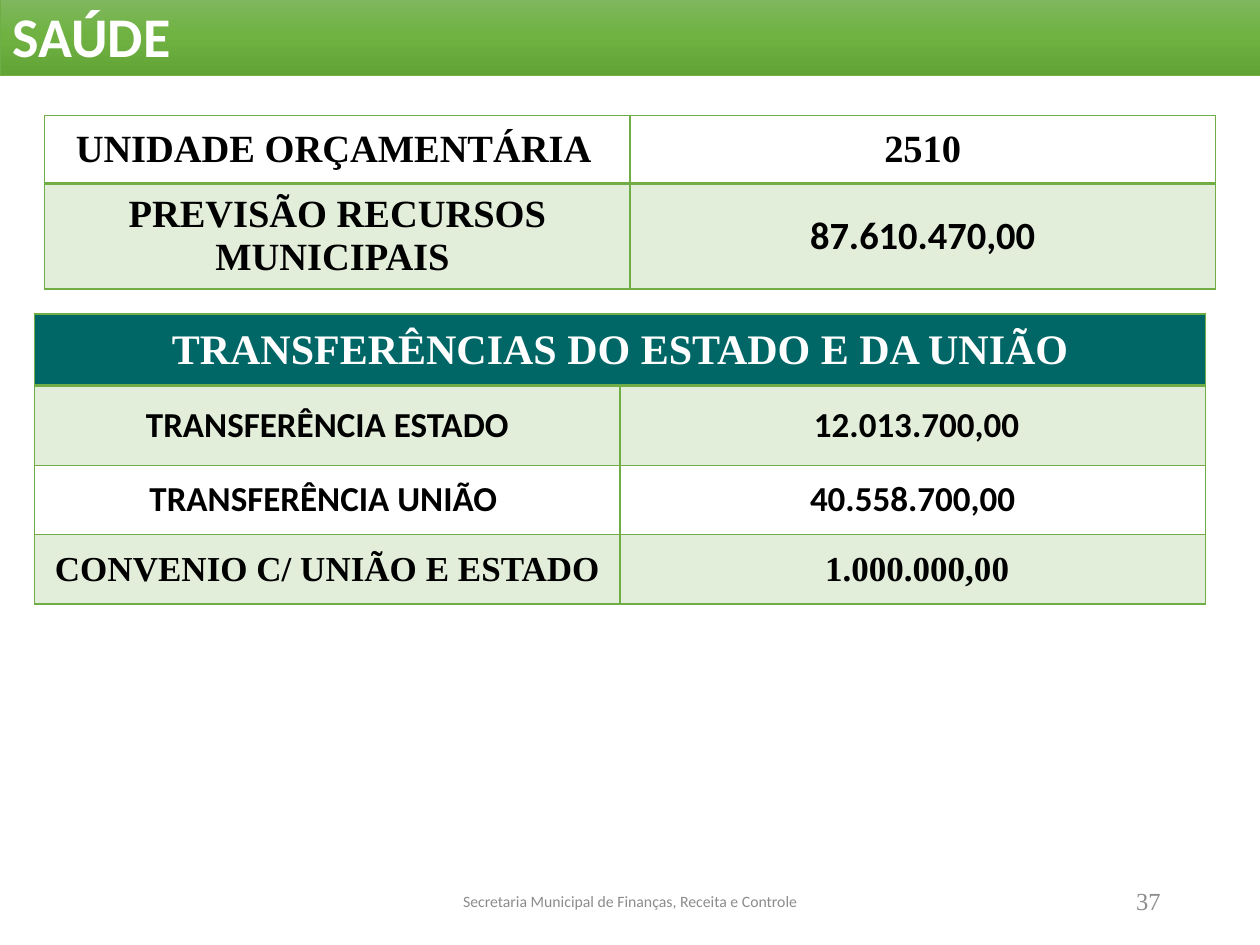
from copy import deepcopy
from lxml.etree import SubElement
from pptx import Presentation
from pptx.dml.color import RGBColor as RGB
from pptx.enum.text import MSO_ANCHOR as Anchor, PP_ALIGN as Align
from pptx.oxml.ns import qn
from pptx.util import Cm, Pt

GREEN = RGB(0x70, 0xAD, 0x47)
TEAL = RGB(0x00, 0x66, 0x66)
BLACK = RGB(0, 0, 0)
WHITE = RGB(0xFF, 0xFF, 0xFF)
GREY = RGB(0x8C, 0x8C, 0x8C)
SHADES = [RGB(0x81, 0xB8, 0x61), RGB(0x6F, 0xB2, 0x42), RGB(0x62, 0xA3, 0x36)]
SANS = "Calibri"
SERIF = "Times New Roman"


def put_text(frame, text, size, font, color, bold=True, align=Align.CENTER):
    para = frame.paragraphs[0]
    para.alignment = align
    run = para.add_run()
    run.text = text
    run.font.size = Pt(size)
    run.font.name = font
    run.font.bold = bold
    run.font.color.rgb = color


def add_title(slide, text):
    bar = slide.shapes.title
    bar.left, bar.top, bar.width, bar.height = Cm(0), Cm(-0.1), Cm(25.4), Cm(1.63)
    fill = bar.fill
    fill.gradient()
    fill.gradient_angle = 270
    first = fill.gradient_stops[0]._gs
    first.addnext(deepcopy(first))
    for i, (stop, shade) in enumerate(zip(fill.gradient_stops, SHADES)):
        stop.position = i / 2
        stop.color.rgb = shade
    bar.line.color.rgb = GREEN
    bar.line.width = Pt(0.5)
    bar.text_frame.vertical_anchor = Anchor.TOP
    put_text(bar.text_frame, text, 32, SANS, WHITE, align=Align.LEFT)


def add_note(slide, left, width, text, size, font, align):
    box = slide.shapes.add_textbox(Cm(left), Cm(17.65), Cm(width), Cm(1.02))
    frame = box.text_frame
    frame.word_wrap = True
    frame.vertical_anchor = Anchor.MIDDLE
    put_text(frame, text, size, font, GREY, False, align)


def set_edges(cell, base):
    """Draw thin green borders, with the bottom one `base` points wide."""
    props = cell._tc.get_or_add_tcPr()
    for side, width in zip("LRTB", (1, 1, 1, base)):
        line = SubElement(props, qn("a:ln" + side), w=str(Pt(width)))
        solid = SubElement(line, qn("a:solidFill"))
        SubElement(solid, qn("a:srgbClr"), val=str(GREEN))


def set_fill(cell, color, alpha=100):
    if color is None:
        cell.fill.background()
        return
    cell.fill.solid()
    cell.fill.fore_color.rgb = color
    tone = cell._tc.tcPr.find(".//" + qn("a:solidFill") + "[last()]/" + qn("a:srgbClr"))
    tone = cell._tc.tcPr.find(qn("a:solidFill") + "/" + qn("a:srgbClr"))
    SubElement(tone, qn("a:alpha"), val=str(alpha * 1000))


def add_grid(slide, left, top, heights, rows, size, head=None):
    """Add a two-column table; odd rows are tinted, and rows hold (text, font) pairs.

    A head is a (text, size, font) title that spans the first row.
    """
    shape = slide.shapes.add_table(len(heights), 2, Cm(left), Cm(top),
                                   Cm(23.6), Cm(sum(heights)))
    table = shape.table
    for row, height in zip(table.rows, heights):
        row.height = Cm(height)
    for r in range(len(heights)):
        for cell in table.rows[r].cells:
            set_edges(cell, 2 if r == 0 else 1)
            cell.vertical_anchor = Anchor.MIDDLE
            if head and r == 0:
                set_fill(cell, TEAL)
            elif r % 2:
                set_fill(cell, GREEN, 20)
            else:
                set_fill(cell, None)
    if head:
        table.cell(0, 0).merge(table.cell(0, 1))
        put_text(table.cell(0, 0).text_frame, *head, WHITE)
    for r, row in enumerate(rows, 1 if head else 0):
        for c, (text, font) in enumerate(row):
            put_text(table.cell(r, c).text_frame, text, size, font, BLACK)


def main():
    deck = Presentation()
    deck.slide_width, deck.slide_height = Cm(25.4), Cm(19.05)
    slide = deck.slides.add_slide(deck.slide_layouts[5])
    add_title(slide, "SAÚDE")
    add_note(slide, 17.93, 5.72, "37", 14, SERIF, Align.RIGHT)
    add_note(slide, 8.41, 8.58, "Secretaria Municipal de Finanças, Receita e Controle",
             9, SANS, Align.CENTER)
    add_grid(slide, 0.9, 2.33, [1.37, 2.13], [
        [("UNIDADE ORÇAMENTÁRIA ", SERIF), ("2510", SERIF)],
        [("PREVISÃO RECURSOS MUNICIPAIS ", SERIF), ("87.610.470,00", SANS)],
    ], 22)
    add_grid(slide, 0.7, 6.33, [1.45, 1.6, 1.4, 1.4], [
        [("TRANSFERÊNCIA ESTADO", SANS), (" 12.013.700,00", SANS)],
        [("TRANSFERÊNCIA UNIÃO ", SANS), ("40.558.700,00", SANS)],
        [("CONVENIO C/ UNIÃO E ESTADO", SERIF), (" 1.000.000,00", SERIF)],
    ], 20, ("TRANSFERÊNCIAS DO ESTADO E DA UNIÃO", 24, SERIF))
    deck.save("out.pptx")


if __name__ == "__main__":
    main()
